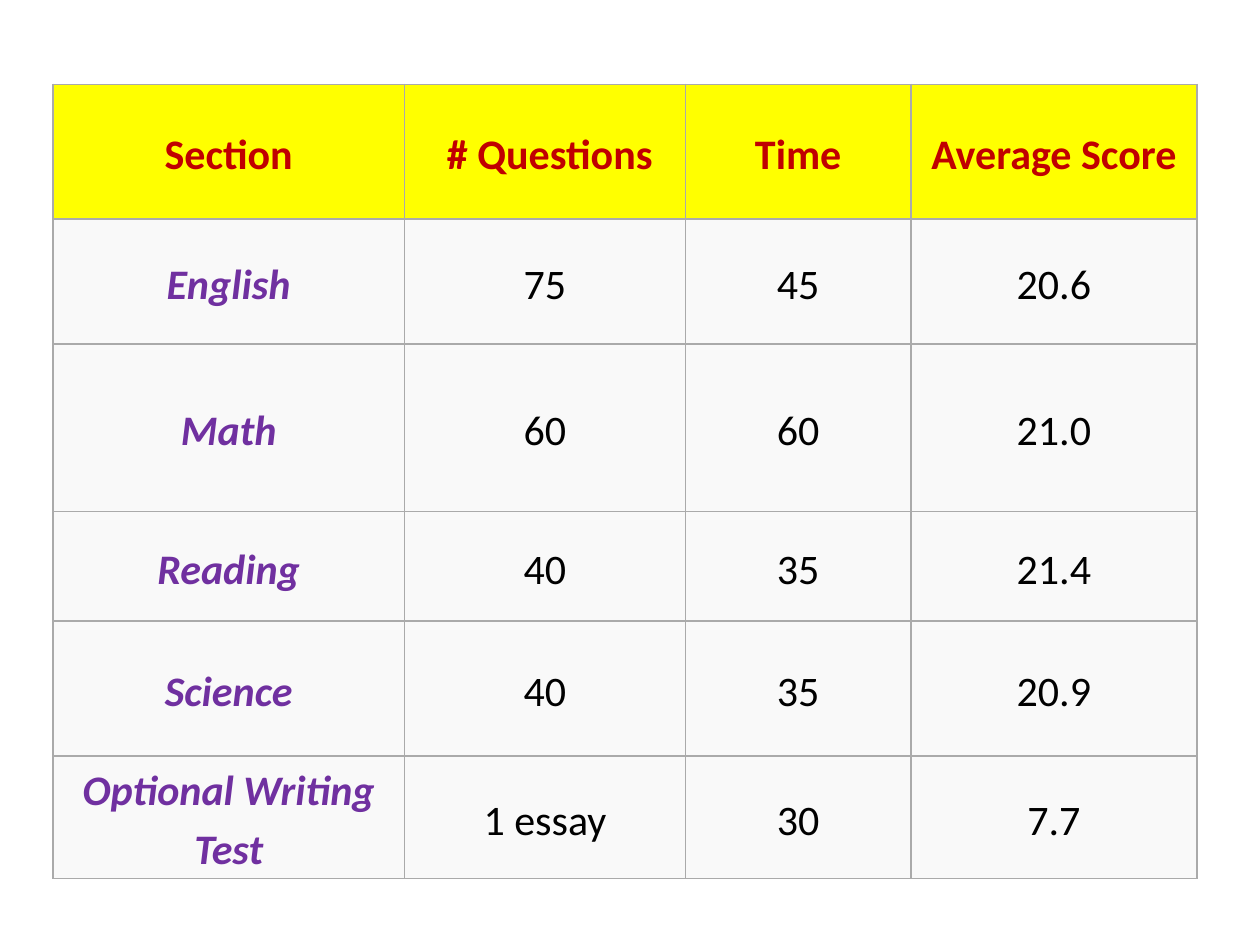
from lxml import etree
from pptx import Presentation
from pptx.dml.color import RGBColor
from pptx.enum.text import MSO_ANCHOR, PP_ALIGN
from pptx.oxml.ns import qn
from pptx.util import Inches, Pt

MIDDLE = MSO_ANCHOR.MIDDLE
CENTER = PP_ALIGN.CENTER

YELLOW = RGBColor(0xFF, 0xFF, 0x00)
PALE_GRAY = RGBColor(0xF9, 0xF9, 0xF9)
BORDER_GRAY = RGBColor(0xAA, 0xAA, 0xAA)
RED = RGBColor(0xC0, 0x00, 0x00)
PURPLE = RGBColor(0x70, 0x30, 0xA0)
BLACK = RGBColor(0x00, 0x00, 0x00)

FONT = "Calibri"
CELL_MARGIN = Inches(0.02)
COLUMN_WIDTHS = (2.79, 2.23, 1.79, 2.27)
ROW_HEIGHTS = (1.07, 0.99, 1.33, 0.87, 1.07, 0.73)
SECTIONS = (
    ("Section", " # Questions", "Time", "Average Score"),
    ("English", "75", "45", "20.6"),
    ("Math", "60", "60", "21.0"),
    ("Reading", "40", "35", "21.4"),
    ("Science", "40", "35", "20.9"),
    ("Optional Writing Test", "1 essay", "30", "7.7"),
)


def add_borders(cell):
    """Draw a thin gray line on all four sides of a cell."""
    properties = cell._tc.get_or_add_tcPr()
    for position, side in enumerate(("lnL", "lnR", "lnT", "lnB")):
        line = etree.Element(qn(f"a:{side}"), w=str(Pt(1)))
        fill = etree.SubElement(line, qn("a:solidFill"))
        etree.SubElement(fill, qn("a:srgbClr"), val=str(BORDER_GRAY))
        properties.insert(position, line)


def fill_cell(cell, text, background, color, bold, italic):
    """Write centred text into a cell and style it."""
    cell.margin_left = cell.margin_right = CELL_MARGIN
    cell.margin_top = cell.margin_bottom = CELL_MARGIN
    cell.vertical_anchor = MIDDLE
    cell.fill.solid()
    cell.fill.fore_color.rgb = background
    add_borders(cell)
    paragraph = cell.text_frame.paragraphs[0]
    paragraph.alignment = CENTER
    paragraph.line_spacing = 1.15
    run = paragraph.add_run()
    run.text = text
    run.font.name = FONT
    run.font.size = Pt(24)
    run.font.bold = bold
    run.font.italic = italic
    run.font.color.rgb = color


def add_section_table(slide, left, top, width, height):
    """Place the table of test sections in the given box."""
    frame = slide.shapes.add_table(
        len(SECTIONS), len(COLUMN_WIDTHS), left, top, width, height
    )
    table = frame.table
    for column, column_width in zip(table.columns, COLUMN_WIDTHS):
        column.width = Inches(column_width)
    for row, row_height in zip(table.rows, ROW_HEIGHTS):
        row.height = Inches(row_height)
    frame.width, frame.height = width, height
    for row_index, texts in enumerate(SECTIONS):
        for column_index, text in enumerate(texts):
            if row_index == 0:
                style = (YELLOW, RED, True, False)
            elif column_index == 0:
                style = (PALE_GRAY, PURPLE, True, True)
            else:
                style = (PALE_GRAY, BLACK, False, False)
            fill_cell(table.cell(row_index, column_index), text, *style)


def main():
    """Build and save the presentation."""
    presentation = Presentation()
    presentation.slide_width = Inches(10)
    presentation.slide_height = Inches(7.5)
    slide = presentation.slides.add_slide(presentation.slide_layouts[6])
    add_section_table(slide, Inches(0.42), Inches(0.67), Inches(9.08), Inches(6.31))
    presentation.save("out.pptx")


if __name__ == "__main__":
    main()
